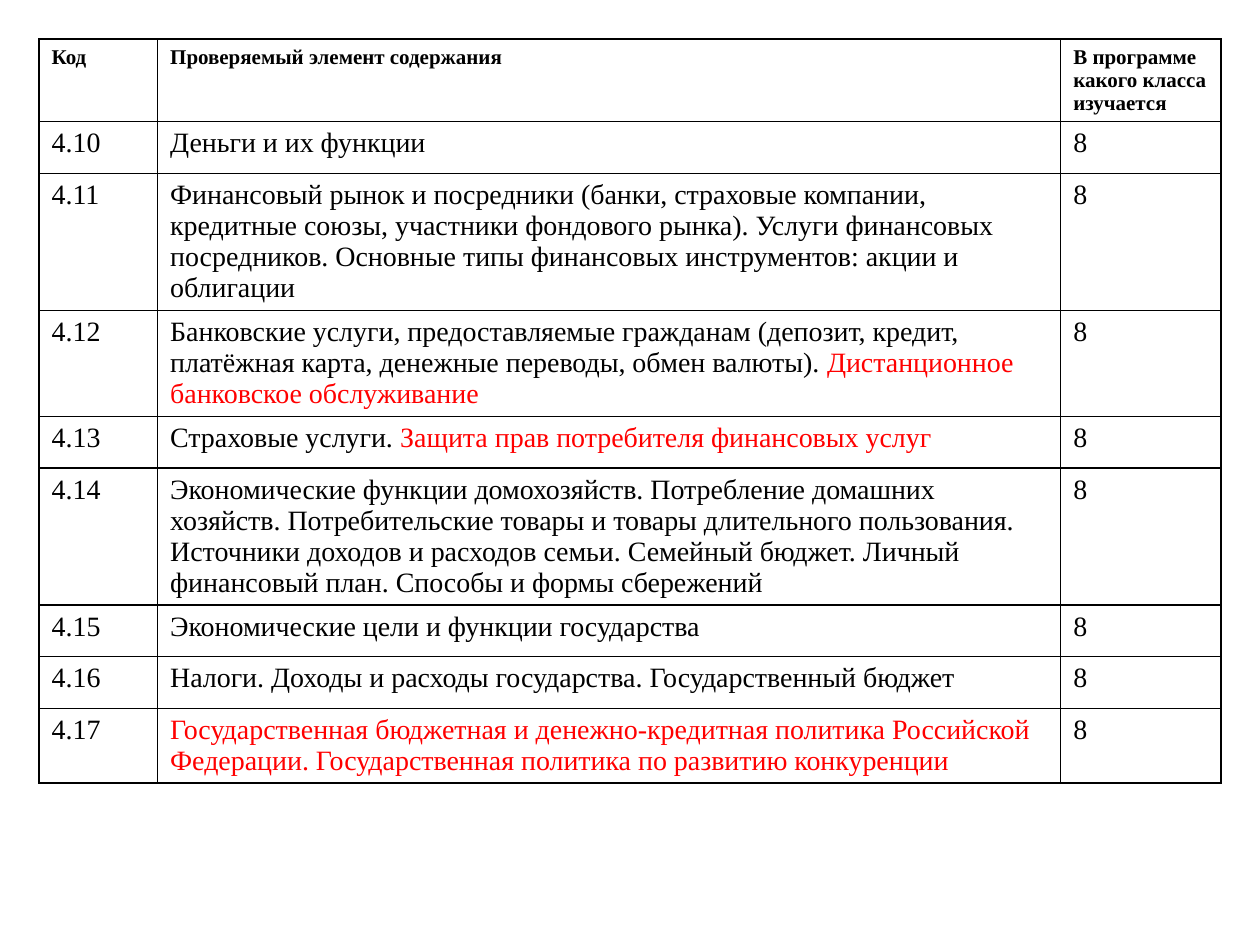
import dataclasses

import lxml.etree
import pptx
import pptx.dml.color
import pptx.oxml.ns
import pptx.util

Inches = pptx.util.Inches
Pt = pptx.util.Pt


@dataclasses.dataclass(frozen=True)
class Theme:
    """Fonts, sizes and colours of the slide."""
    font: str = "Times New Roman"
    header_size: int = 12
    body_size: int = 16
    text: str = "000000"
    accent: str = "FF0000"
    paper: str = "FFFFFF"
    border: str = "000000"
    border_width: int = 1


THEME = Theme()
HEADINGS = ("Код", "Проверяемый элемент содержания", "В программе какого класса изучается")
FIRST_TOPIC = 10
GRADE = "8"
TOPICS = [
    ("Деньги и их функции", ""),
    ("Финансовый рынок и посредники (банки, страховые компании, кредитные союзы, "
     "участники фондового рынка). Услуги финансовых посредников. Основные типы "
     "финансовых инструментов: акции и облигации", ""),
    ("Банковские услуги, предоставляемые гражданам (депозит, кредит, платёжная карта, "
     "денежные переводы, обмен валюты). ", "Дистанционное банковское обслуживание"),
    ("Страховые услуги. ", "Защита прав потребителя финансовых услуг"),
    ("Экономические функции домохозяйств. Потребление домашних хозяйств. "
     "Потребительские товары и товары длительного пользования. Источники доходов и "
     "расходов семьи. Семейный бюджет. Личный финансовый план. Способы и формы "
     "сбережений", ""),
    ("Экономические цели и функции государства", ""),
    ("Налоги. Доходы и расходы государства. Государственный бюджет", ""),
    ("", "Государственная бюджетная и денежно-кредитная политика Российской Федерации. "
     "Государственная политика по развитию конкуренции"),
]
COLUMN_WIDTHS = (0.94, 7.16, 1.27)
ROW_HEIGHT = 0.41


def rgb(value):
    """Return the colour for a hex value."""
    return pptx.dml.color.RGBColor.from_string(value)


def border_cell(cell):
    """Draw a solid border on all four sides of a cell."""
    properties = cell._tc.get_or_add_tcPr()
    qn = pptx.oxml.ns.qn
    for index, side in enumerate(("a:lnL", "a:lnR", "a:lnT", "a:lnB")):
        line = lxml.etree.Element(qn(side), w=str(Pt(THEME.border_width)))
        fill = lxml.etree.SubElement(line, qn("a:solidFill"))
        lxml.etree.SubElement(fill, qn("a:srgbClr"), val=THEME.border)
        properties.insert(index, line)


def fill_cell(cell, runs, size, bold):
    """Write coloured runs into a cell and style it."""
    cell.fill.solid()
    cell.fill.fore_color.rgb = rgb(THEME.paper)
    border_cell(cell)
    paragraph = cell.text_frame.paragraphs[0]
    for wording, color in runs:
        if wording:
            run = paragraph.add_run()
            run.text = wording
            run.font.name = THEME.font
            run.font.size = Pt(size)
            run.font.bold = bold
            run.font.color.rgb = rgb(color)


def add_topics_table(slide, left, top, width):
    """Place the table of topics in the given box."""
    rows = [[[(heading, THEME.text)] for heading in HEADINGS]]
    for number, (known, added) in enumerate(TOPICS, FIRST_TOPIC):
        rows.append([[(f"4.{number}", THEME.text)],
                     [(known, THEME.text), (added, THEME.accent)],
                     [(GRADE, THEME.text)]])
    height = Inches(ROW_HEIGHT * len(rows))
    topics = slide.shapes.add_table(len(rows), len(HEADINGS), left, top, width, height).table
    for column, share in zip(topics.columns, COLUMN_WIDTHS):
        column.width = int(width * share / sum(COLUMN_WIDTHS))
    for row_index, row in enumerate(rows):
        topics.rows[row_index].height = Inches(ROW_HEIGHT)
        is_header = row_index == 0
        size = THEME.header_size if is_header else THEME.body_size
        for column_index, runs in enumerate(row):
            fill_cell(topics.cell(row_index, column_index), runs, size, is_header)


def main():
    """Build and save the presentation."""
    deck = pptx.Presentation()
    deck.slide_width, deck.slide_height = Inches(10), Inches(7.5)
    slide = deck.slides.add_slide(deck.slide_layouts[6])
    slide.background.fill.solid()
    slide.background.fill.fore_color.rgb = rgb(THEME.paper)
    add_topics_table(slide, Inches(0.31), Inches(0.31), Inches(9.38))
    deck.save("out.pptx")


if __name__ == "__main__":
    main()
